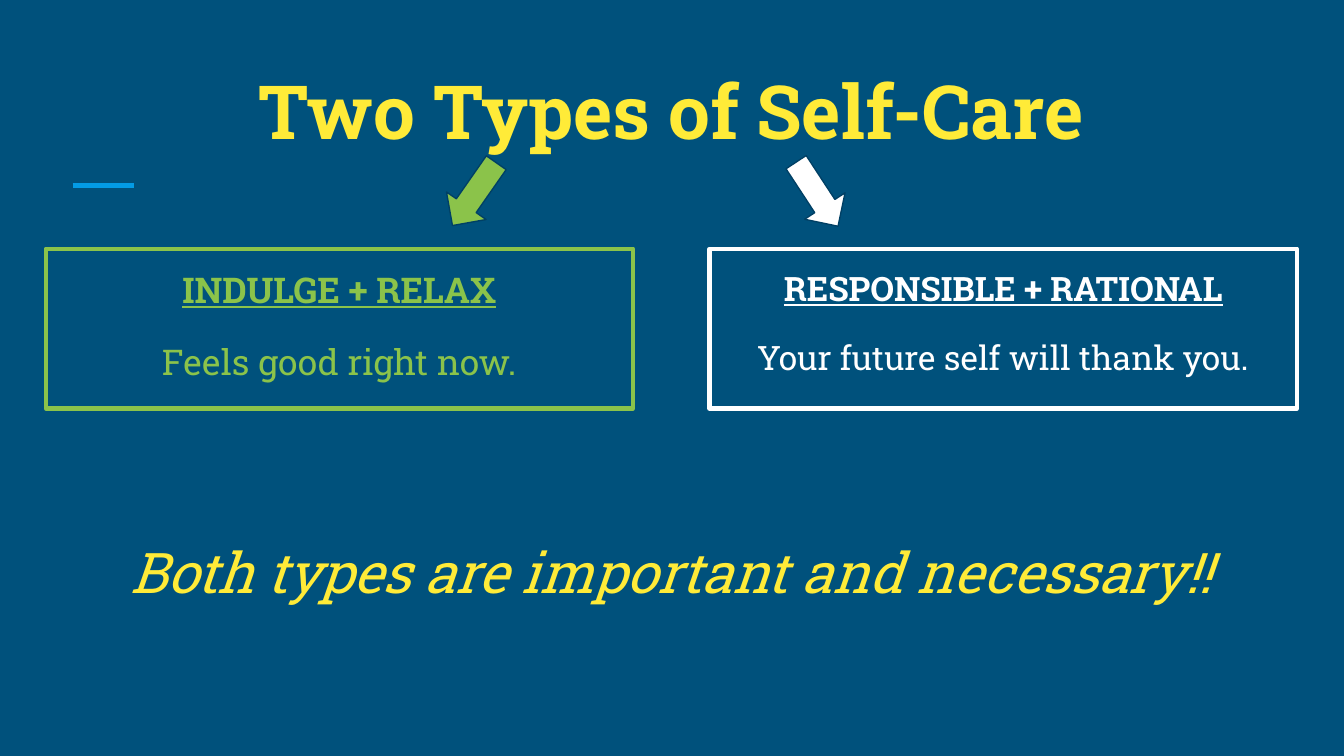
from pptx import Presentation
from pptx.dml.color import RGBColor
from pptx.enum.shapes import MSO_CONNECTOR as CONN, MSO_SHAPE as SHAPE
from pptx.enum.text import MSO_ANCHOR as ANCHOR, PP_ALIGN as ALIGN
from pptx.oxml.ns import qn
from pptx.util import Inches, Pt
from lxml.etree import SubElement

FONT = "Roboto Slab"
COLORS = {
    "background": "00517C",
    "accent": "039BE5",
    "yellow": "FFEB38",
    "green": "8BC34A",
    "white": "FFFFFF",
    "outline": "004065",
}
COLS, ROWS = 100, 56.25
CELL = Inches(10) // COLS


def rgb(name):
    return RGBColor.from_string(COLORS[name])


def grid(*values):
    """Turn columns and rows into lengths."""
    return [round(v * CELL) for v in values]


def set_line(s, color, width):
    s.line.color.rgb = rgb(color)
    s.line.width = Pt(width)


def prepare_frame(tf, anchor=ANCHOR.TOP):
    tf.word_wrap = True
    tf.vertical_anchor = anchor
    tf.margin_left = tf.margin_right = tf.margin_top = tf.margin_bottom = CELL


def write(p, text, size, color, bold=False, italic=False, underline=False,
          spacing=None, gap=0):
    p.alignment = ALIGN.CENTER
    p.line_spacing = spacing
    p.space_before = p.space_after = Pt(gap)
    r = p.add_run()
    r.text = text
    r.font.name, r.font.size = FONT, Pt(size)
    r.font.bold, r.font.italic, r.font.underline = bold, italic, underline
    r.font.color.rgb = rgb(color)


def add_text(slide, box, text, anchor=ANCHOR.TOP, **fmt):
    tf = slide.shapes.add_textbox(*grid(*box)).text_frame
    prepare_frame(tf, anchor)
    write(tf.paragraphs[0], text, **fmt)


def add_accent(slide, x, y, width):
    line = slide.shapes.add_connector(CONN.STRAIGHT, *grid(x, y, x + width, y))
    set_line(line, "accent", 3)
    SubElement(line._element.spPr, qn("a:effectLst"))


def add_arrow(slide, box, color, angle):
    s = slide.shapes.add_shape(SHAPE.DOWN_ARROW, *grid(*box))
    s.shadow.inherit = False
    s.rotation = angle
    s.fill.solid()
    s.fill.fore_color.rgb = rgb(color)
    set_line(s, "outline", 0.75)


def add_type(slide, box, heading, detail, size, color, arrow_dx, angle):
    """Place a framed type of self-care and the arrow that leads to it."""
    x, y, _, _ = box
    s = slide.shapes.add_shape(SHAPE.RECTANGLE, *grid(*box))
    s.shadow.inherit = False
    s.fill.background()
    set_line(s, color, 2.25)
    tf = s.text_frame
    prepare_frame(tf)
    write(tf.paragraphs[0], heading, size, color, bold=True, underline=True,
          spacing=1.15)
    write(tf.add_paragraph(), detail, size, color, spacing=1.15, gap=12)
    add_arrow(slide, (x + arrow_dx, y - 6.9, 3.6, 5.7), color, angle)


def build_slide(prs):
    slide = prs.slides.add_slide(prs.slide_layouts[6])
    slide.background.fill.solid()
    slide.background.fill.fore_color.rgb = rgb("background")

    add_accent(slide, 5.4, 13.8, 4.6)
    add_text(slide, (4.2, 5, 91.5, 7.5), "Two Types of Self-Care",
             anchor=ANCHOR.BOTTOM, size=40, color="yellow", bold=True)

    margin, top, width, height = 3.4, 18.5, 43.7, 11.9
    types = [
        ("INDULGE + RELAX", "Feels good right now.", 19, "green", 30.1, 34.9),
        ("RESPONSIBLE + RATIONAL", "Your future self will thank you.",
         18, "white", 6.2, 326.8),
    ]
    for i, details in enumerate(types):
        add_type(slide, (margin + i * 49.4, top, width, height), *details)

    add_text(slide, (0, 39, COLS, 7.1),
             "Both types are important and necessary!!",
             size=30, color="yellow", italic=True)


def main():
    prs = Presentation()
    prs.slide_width, prs.slide_height = grid(COLS, ROWS)
    build_slide(prs)
    prs.save("out.pptx")


if __name__ == "__main__":
    main()
